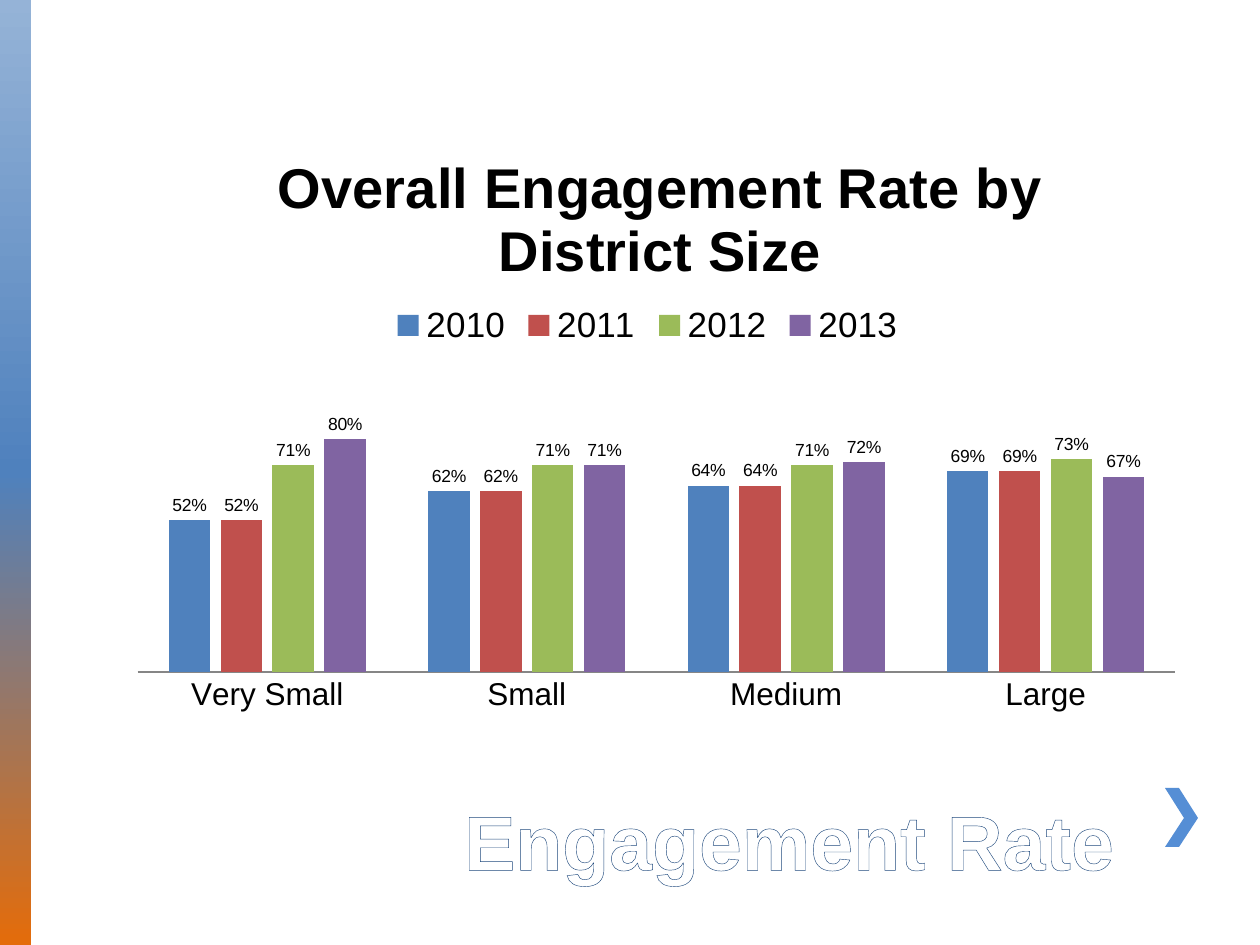
from lxml import etree
from pptx import Presentation
from pptx.chart.data import CategoryChartData
from pptx.dml.color import RGBColor
from pptx.enum.chart import XL_CHART_TYPE, XL_LABEL_POSITION, XL_LEGEND_POSITION, XL_TICK_MARK
from pptx.enum.shapes import MSO_SHAPE
from pptx.enum.text import MSO_ANCHOR, PP_ALIGN
from pptx.oxml import parse_xml
from pptx.oxml.ns import nsdecls, qn
from pptx.util import Emu, Pt

COLUMNS = XL_CHART_TYPE.COLUMN_CLUSTERED
OUTSIDE = XL_LABEL_POSITION.OUTSIDE_END
TOP = XL_LEGEND_POSITION.TOP
NO_TICK = XL_TICK_MARK.NONE
RECTANGLE = MSO_SHAPE.RECTANGLE
BOTTOM = MSO_ANCHOR.BOTTOM
RIGHT = PP_ALIGN.RIGHT

SCALE = 914400 / 126
FONT = "Arial"
COLORS = {
    "white": "FFFFFF", "black": "000000", "navy": "1F497D", "chevron": "558ED5",
    "pale": "95B3D7", "blue": "4F81BD", "orange": "E46C0A", "axis": "868686",
    "red": "C0504D", "green": "9BBB59", "purple": "8064A2",
}
SIZES = ["Very Small", "Small", "Medium", "Large"]
RATES = [
    ("2010", "blue", (0.52, 0.62, 0.64, 0.69)),
    ("2011", "red", (0.52, 0.62, 0.64, 0.69)),
    ("2012", "green", (0.71, 0.71, 0.71, 0.73)),
    ("2013", "purple", (0.8, 0.71, 0.72, 0.67)),
]


def px(length):
    """Turn pixels into EMU."""
    return Emu(round(length * SCALE))


def color(name):
    """Look up a named colour."""
    return RGBColor.from_string(COLORS[name])


def format_font(font, size, fill="black", bold=False):
    """Set the typeface, size, colour and weight of a font."""
    font.name, font.size, font.bold = FONT, Pt(size), bold
    font.color.rgb = color(fill)


def write_text(frame, text, size, align=None, outline=None, **font_format):
    """Write one formatted paragraph, with outlined letters if asked."""
    para = frame.paragraphs[0]
    para.alignment = align
    span = para.add_run()
    span.text = text
    format_font(span.font, size, **font_format)
    if outline:
        span.font._element.insert(0, parse_xml(
            f'<a:ln {nsdecls("a")} w="12700"><a:solidFill>'
            f'<a:srgbClr val="{COLORS[outline]}"/></a:solidFill></a:ln>'))


def add_gradient_bar(page, left, top, width, height, names):
    """Add a bar whose evenly spaced colours run downwards."""
    bar = page.shapes.add_shape(RECTANGLE, px(left), px(top), px(width), px(height))
    bar.shadow.inherit = False
    bar.line.fill.background()
    bar.fill.gradient()
    bar.fill.gradient_angle = 270
    stops = bar._element.spPr.find(qn("a:gradFill")).find(qn("a:gsLst"))
    for stop in list(stops):
        stops.remove(stop)
    for index, name in enumerate(names):
        stop = etree.SubElement(stops, qn("a:gs"), pos=str(index * 100000 // (len(names) - 1)))
        etree.SubElement(stop, qn("a:srgbClr"), val=COLORS[name])


def add_chevron(page, left, top, width, height, stroke):
    """Add a chevron that points right."""
    middle, right, bottom = top + height / 2, left + width, top + height
    points = [(left, top), (right - stroke, middle), (left, bottom),
              (left + stroke, bottom), (right, middle), (left + stroke, top)]
    builder = page.shapes.build_freeform(*points[0], scale=SCALE)
    builder.add_line_segments(points[1:], close=True)
    chevron = builder.convert_to_shape()
    chevron.shadow.inherit = False
    chevron.fill.solid()
    chevron.fill.fore_color.rgb = color("chevron")
    chevron.line.fill.background()


def add_title(page, text, left, top, width, height):
    """Place the page title at the lower right."""
    box = page.shapes.title
    box.left, box.top, box.width, box.height = map(px, (left, top, width, height))
    frame = box.text_frame
    frame.word_wrap = True
    frame.vertical_anchor = BOTTOM
    frame.margin_right = px(50)
    write_text(frame, text, 44, align=RIGHT, fill="white", bold=True, outline="navy")


def place_part(chart, tag, index, **fractions):
    """Give a chart part a fixed place, in fractions of the chart."""
    part = chart.element.find(".//" + qn(tag))
    for old in part.findall(qn("c:layout")):
        part.remove(old)
    layout = etree.Element(qn("c:layout"))
    manual = etree.SubElement(layout, qn("c:manualLayout"))
    if "w" in fractions:
        etree.SubElement(manual, qn("c:layoutTarget"), val="inner")
    for key in ("x", "y"):
        etree.SubElement(manual, qn(f"c:{key}Mode"), val="edge")
    for key, value in fractions.items():
        etree.SubElement(manual, qn(f"c:{key}"), val=str(value))
    part.insert(index, layout)


def style_axes(chart):
    """Show only the category axis."""
    values = chart.value_axis
    values.minimum_scale, values.maximum_scale = 0, 1
    values.has_major_gridlines = False
    values.visible = False
    sizes = chart.category_axis
    sizes.major_tick_mark = NO_TICK
    sizes.format.line.color.rgb = color("axis")
    format_font(sizes.tick_labels.font, 18)


def style_columns(plot):
    """Set column gaps, colours and value labels."""
    plot.gap_width, plot.overlap = 150, -25
    plot.vary_by_categories = False
    for series, (_, name, _) in zip(plot.series, RATES):
        series.format.fill.solid()
        series.format.fill.fore_color.rgb = color(name)
        labels = series.data_labels
        labels.show_value = True
        labels.number_format, labels.number_format_is_linked = "0%", False
        labels.position = OUTSIDE
        format_font(labels.font, 10)


def add_rate_chart(page, title, left, top, width, height):
    """Add the column chart of rates by district size."""
    data = CategoryChartData(number_format="0%")
    data.categories = SIZES
    for year, _, rates in RATES:
        data.add_series(year, rates)
    chart = page.shapes.add_chart(
        COLUMNS, px(left), px(top), px(width), px(height), data).chart
    format_font(chart.font, 10)
    chart.has_title = True
    write_text(chart.chart_title.text_frame, title, 32, bold=True)
    chart.has_legend = True
    chart.legend.position = TOP
    chart.legend.include_in_layout = False
    format_font(chart.legend.font, 20)
    style_axes(chart)
    style_columns(chart.plots[0])
    place_part(chart, "c:title", 1, x=0.14, y=0.04)
    place_part(chart, "c:legend", 1, x=0.25, y=0.3)
    place_part(chart, "c:plotArea", 0, x=0.02, y=0.435, w=0.96, h=0.478)


def main():
    """Build and save the deck."""
    deck = Presentation()
    deck.slide_width, deck.slide_height = px(1260), px(945)
    page = deck.slides.add_slide(deck.slide_layouts[5])
    add_gradient_bar(page, 0, 0, 31, 945, ["pale", "blue", "orange"])
    add_chevron(page, 1165, 788, 33, 59, 14)
    add_title(page, "Engagement Rate", 73, 735, 1092, 157)
    add_rate_chart(page, "Overall Engagement Rate by District Size", 116, 116, 1081, 609)
    deck.save("out.pptx")


if __name__ == "__main__":
    main()
